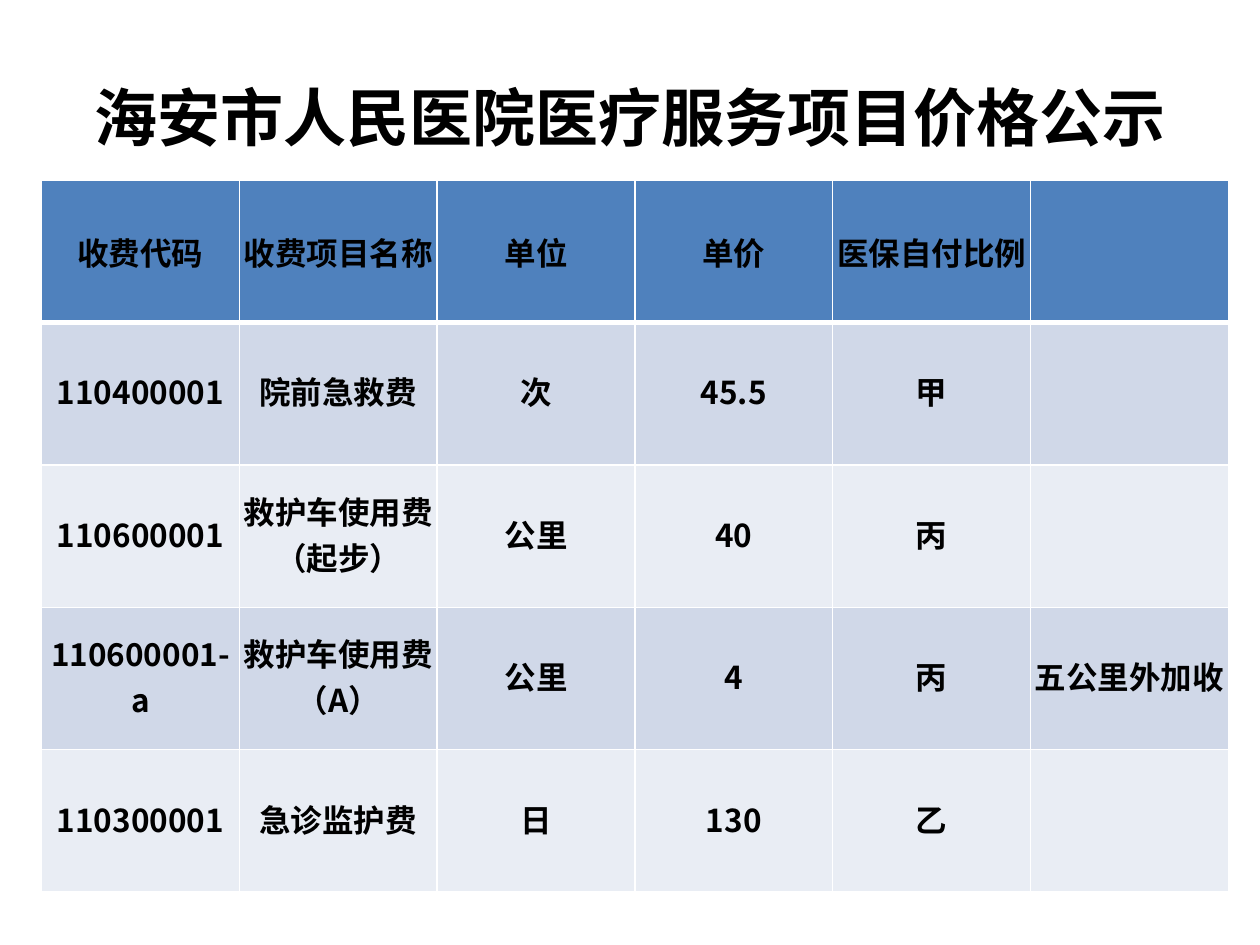
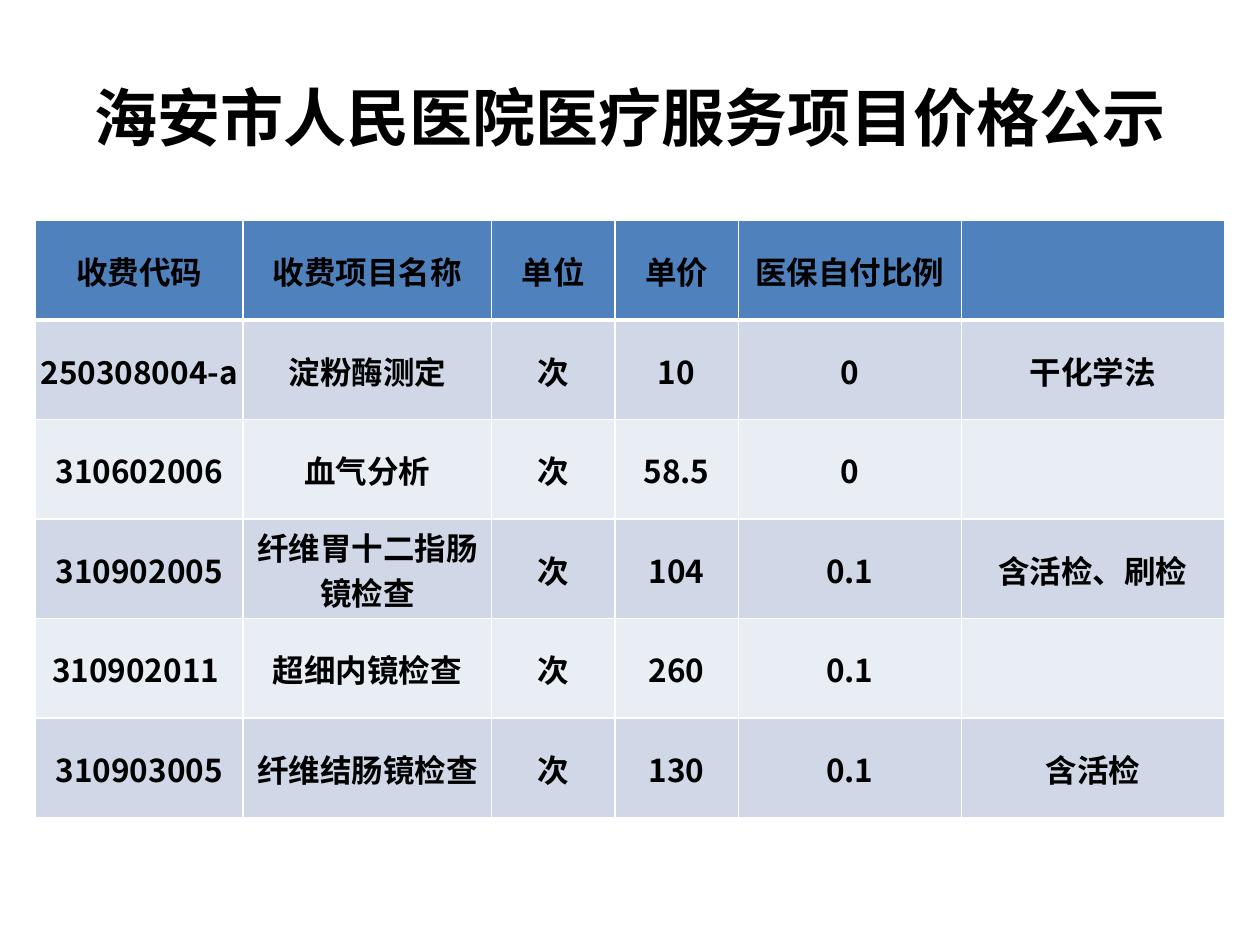
from lxml import etree
from pptx import Presentation
from pptx.dml.color import RGBColor
from pptx.enum.text import MSO_ANCHOR, PP_ALIGN
from pptx.oxml.ns import qn
from pptx.util import Inches, Pt

CENTER = PP_ALIGN.CENTER
MIDDLE = MSO_ANCHOR.MIDDLE

BLACK = RGBColor(0x00, 0x00, 0x00)
WHITE = RGBColor(0xFF, 0xFF, 0xFF)
BLUE = RGBColor(0x4F, 0x81, 0xBD)
BANDS = [RGBColor(0xE9, 0xED, 0xF4), RGBColor(0xD0, 0xD8, 0xE8)]

LATIN = "Calibri"
CJK = "Noto Sans CJK SC"
TITLE = "海安市人民医院医疗服务项目价格公示"
HEAD = ["收费代码", "收费项目名称", "单位", "单价", "医保自付比例", ""]

# Each page: table corner, column widths, row height, lower cell margin, rows
PAGES = [
    dict(left=0.33, top=1.43, cols=[1.57] * 6, high=1.13, foot=0.05, rows=[
        ["110400001", "院前急救费", "次", "45.5", "甲", ""],
        ["110600001", "救护车使用费（起步）", "公里", "40", "丙", ""],
        ["110600001-a", "救护车使用费（A）", "公里", "4", "丙", "五公里外加收"],
        ["110300001", "急诊监护费", "日", "130", "乙", ""],
    ]),
    dict(left=0.28, top=1.75, cols=[1.65, 1.97, 0.98, 0.98, 1.77, 2.09],
         high=0.79, foot=0, rows=[
        ["250308004-a", "淀粉酶测定", "次", "10", "0", "干化学法"],
        ["310602006", "血气分析", "次", "58.5", "0", ""],
        ["310902005", "纤维胃十二指肠镜检查", "次", "104", "0.1", "含活检、刷检"],
        ["310902011 ", "超细内镜检查", "次", "260", "0.1", ""],
        ["310903005", "纤维结肠镜检查", "次", "130", "0.1", "含活检"],
    ]),
]


def style(frame, face, size):
    """Centre the text and set its Latin and East Asian fonts."""
    frame.vertical_anchor = MIDDLE
    for para in frame.paragraphs:
        para.alignment = CENTER
        for run in para.runs:
            font = run.font
            font.name, font.size, font.bold = face, Pt(size), True
            font.color.rgb = BLACK
            east = etree.Element(qn("a:ea"), typeface=CJK)
            run._r.rPr.find(qn("a:latin")).addnext(east)


def edge(cell, widths):
    """Draw white left, right, top and bottom borders, widths in points."""
    props = cell._tc.get_or_add_tcPr()
    for i, (side, width) in enumerate(zip("LRTB", widths)):
        line = etree.Element(qn(f"a:ln{side}"), w=str(Pt(width)))
        fill = etree.SubElement(line, qn("a:solidFill"))
        etree.SubElement(fill, qn("a:srgbClr"), val=str(WHITE))
        props.insert(i, line)


deck = Presentation()
deck.slide_width, deck.slide_height = Inches(10), Inches(7.5)

for page in PAGES:
    slide = deck.slides.add_slide(deck.slide_layouts[5])
    slide.background.fill.solid()
    slide.background.fill.fore_color.rgb = WHITE

    # Title
    title = slide.shapes.title
    title.left, title.top = Inches(0.5), Inches(0.3)
    title.width, title.height = Inches(9), Inches(1.25)
    title.text_frame.text = TITLE
    style(title.text_frame, LATIN, 36)

    # Price table
    rows = [HEAD] + page["rows"]
    cols, high = page["cols"], page["high"]
    table = slide.shapes.add_table(
        len(rows), len(cols), Inches(page["left"]), Inches(page["top"]),
        Inches(sum(cols)), Inches(high * len(rows))).table
    for col, width in zip(table.columns, cols):
        col.width = Inches(width)

    for r, row in enumerate(rows):
        table.rows[r].height = Inches(high)
        for c, text in enumerate(row):
            cell = table.cell(r, c)
            cell.margin_left = cell.margin_right = Inches(0.01)
            cell.margin_top = Inches(0.01)
            cell.margin_bottom = Inches(page["foot"] if r else 0)
            cell.vertical_anchor = MIDDLE
            cell.fill.solid()
            cell.fill.fore_color.rgb = BANDS[r % 2] if r else BLUE
            # A thick rule parts the header from the body
            edge(cell, [1, 1, 3 if r == 1 else 1, 3 if r == 0 else 1])
            if text:
                cell.text_frame.text = text
                style(cell.text_frame, CJK, 18)
                cell.vertical_anchor = MIDDLE

deck.save("out.pptx")
